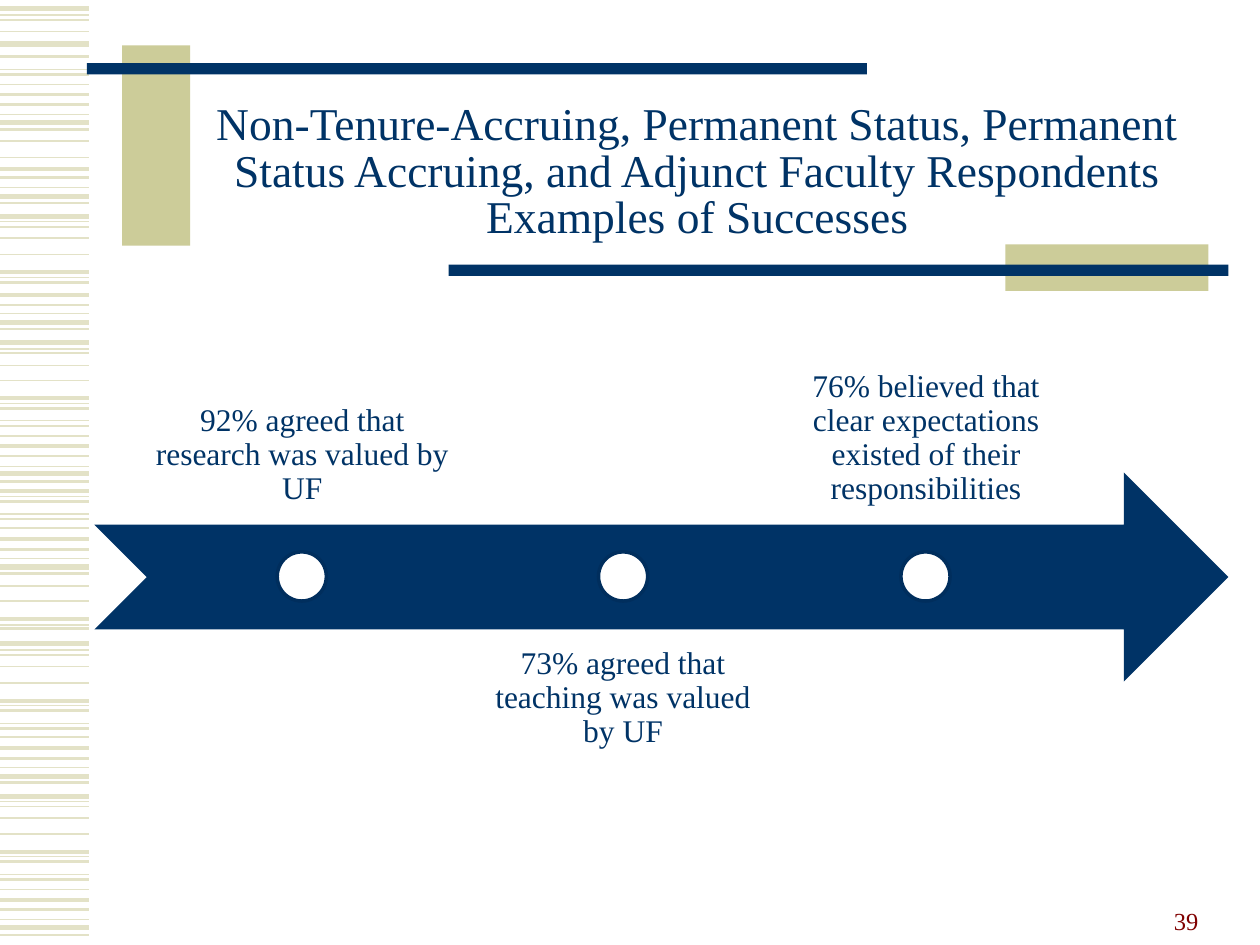
from lxml import etree
from pptx import Presentation
from pptx import util as u
from pptx.dml.color import RGBColor
from pptx.enum import shapes, text

PX = 9144  # 100 px to the inch
FONT = "Times New Roman"
NAVY, KHAKI, PALE, WHITE = "003366", "CCCC99", "E3E2C7", "FFFFFF"
EDGE, RED = "002E5D", "800000"

# Line weight in points -> heights of the stripes
STRIPES = {
    0.75: [12, 55, 91, 149, 176, 220, 249, 277, 320, 334, 370, 394, 408, 443,
           496, 516, 560, 574, 609, 636, 680, 694, 730],
    1: [16, 25, 67, 112, 125, 180, 189, 202, 280, 290, 302, 346, 419, 465,
        477, 520, 529, 542, 585, 640, 649, 662, 706],
    1.5: [45, 59, 83, 103, 141, 161, 224, 242, 261, 324, 338, 362, 382, 398,
          412, 436, 455, 499, 564, 578, 602, 621, 684, 698, 722, 742],
    2.25: [75, 134, 216, 234, 316, 354, 390, 428, 491, 556, 594, 676, 714],
    3: [7, 35, 97, 156, 172, 256, 272, 376, 450, 511, 616, 632, 736],
}
TITLE = ("Non-Tenure-Accruing, Permanent Status, Permanent Status Accruing, "
         "and Adjunct Faculty Respondents\vExamples of Successes")
# Left, width, above the arrow or not, wording
POINTS = [
    (30, 270, True, "92% agreed that research was valued by UF"),
    (301, 237, False, "73% agreed that teaching was valued by UF"),
    (540, 240, True, "76% believed that clear expectations existed of their "
                     "responsibilities"),
]


def rgb(code):
    return RGBColor.from_string(code)


def px(*sizes):
    return [u.Emu(size * PX) for size in sizes]


def block(parts, kind, box, fill, edge=None):
    """Add a flat preset shape, with a 2 pt outline if edge is given."""
    shape = parts.add_shape(kind, *px(*box))
    shape.shadow.inherit = False
    shape.fill.solid()
    shape.fill.fore_color.rgb = rgb(fill)
    if edge:
        shape.line.color.rgb = rgb(edge)
        shape.line.width = u.Pt(2)
    else:
        shape.line.fill.background()
    return shape


def write(frame, words, size, color, align, anchor, space=1.0):
    frame.word_wrap = True
    frame.auto_size = text.MSO_AUTO_SIZE.NONE
    frame.vertical_anchor = anchor
    para = frame.paragraphs[0]
    para.text = words
    para.alignment = align
    para.line_spacing = space
    para.font.size = u.Pt(size)
    para.font.name = FONT
    para.font.color.rgb = rgb(color)


def stripes(slide, left, width):
    parts = slide.shapes.add_group_shape().shapes
    for weight, tops in STRIPES.items():
        for top in tops:
            line = parts.add_connector(
                shapes.MSO_CONNECTOR.STRAIGHT,
                *px(left, top, left + width, top))
            line.line.color.rgb = rgb(PALE)
            line.line.width = u.Pt(weight)
            props = line._element.spPr
            etree.SubElement(props, props.tag.split("}")[0]
                             .replace("presentationml", "drawingml")
                             + "}effectLst")


def header(slide, left, top):
    """Add the crossed bars and set the title between them."""
    bars = [(28, 0, 54, 159, KHAKI), (0, 14, 619, 9, NAVY),
            (729, 158, 161, 37, KHAKI), (287, 174, 619, 9, NAVY)]
    parts = slide.shapes.add_group_shape().shapes
    for x, y, wide, high, fill in bars:
        block(parts, shapes.MSO_SHAPE.RECTANGLE,
              (left + x, top + y, wide, high), fill)
    title = slide.shapes.title
    title.left, title.top, title.width, title.height = px(
        left + 81, top + 39, 807, 125)
    write(title.text_frame, TITLE, 26, NAVY, text.PP_ALIGN.CENTER,
          text.MSO_ANCHOR.MIDDLE, 0.85)


def timeline(slide, left, top, width, high):
    """Add the arrow and its points; labels and arrow take 2/5 of the box."""
    band, dot = high * 2 // 5, 39
    middle = top + (high - band) // 2
    parts = slide.shapes.add_group_shape().shapes
    block(parts, shapes.MSO_SHAPE.NOTCHED_RIGHT_ARROW,
          (left, middle, width, band), NAVY)
    for x, wide, above, words in POINTS:
        label = parts.add_textbox(
            *px(left + x, top if above else top + high - band, wide, band))
        frame = label.text_frame
        frame.margin_left = frame.margin_right = px(14)[0]
        frame.margin_top = frame.margin_bottom = px(14)[0]
        write(frame, words, 18, NAVY, text.PP_ALIGN.CENTER,
              text.MSO_ANCHOR.BOTTOM if above else text.MSO_ANCHOR.TOP, 0.9)
        block(parts, shapes.MSO_SHAPE.OVAL,
              (left + x + (wide - dot) // 2, middle + (band - dot) // 2,
               dot, dot), WHITE, EDGE)


def number(slide, box):
    label = slide.shapes.add_textbox(*px(*box))
    write(label.text_frame, "39", 14, RED, text.PP_ALIGN.RIGHT,
          text.MSO_ANCHOR.BOTTOM)


def main():
    deck = Presentation()
    deck.slide_width, deck.slide_height = px(1000, 750)
    slide = deck.slides.add_slide(deck.slide_layouts[5])
    stripes(slide, 0, 71)
    header(slide, 69, 36)
    timeline(slide, 75, 250, 900, 416)
    number(slide, (721, 697, 240, 50))
    deck.save("out.pptx")


if __name__ == "__main__":
    main()
